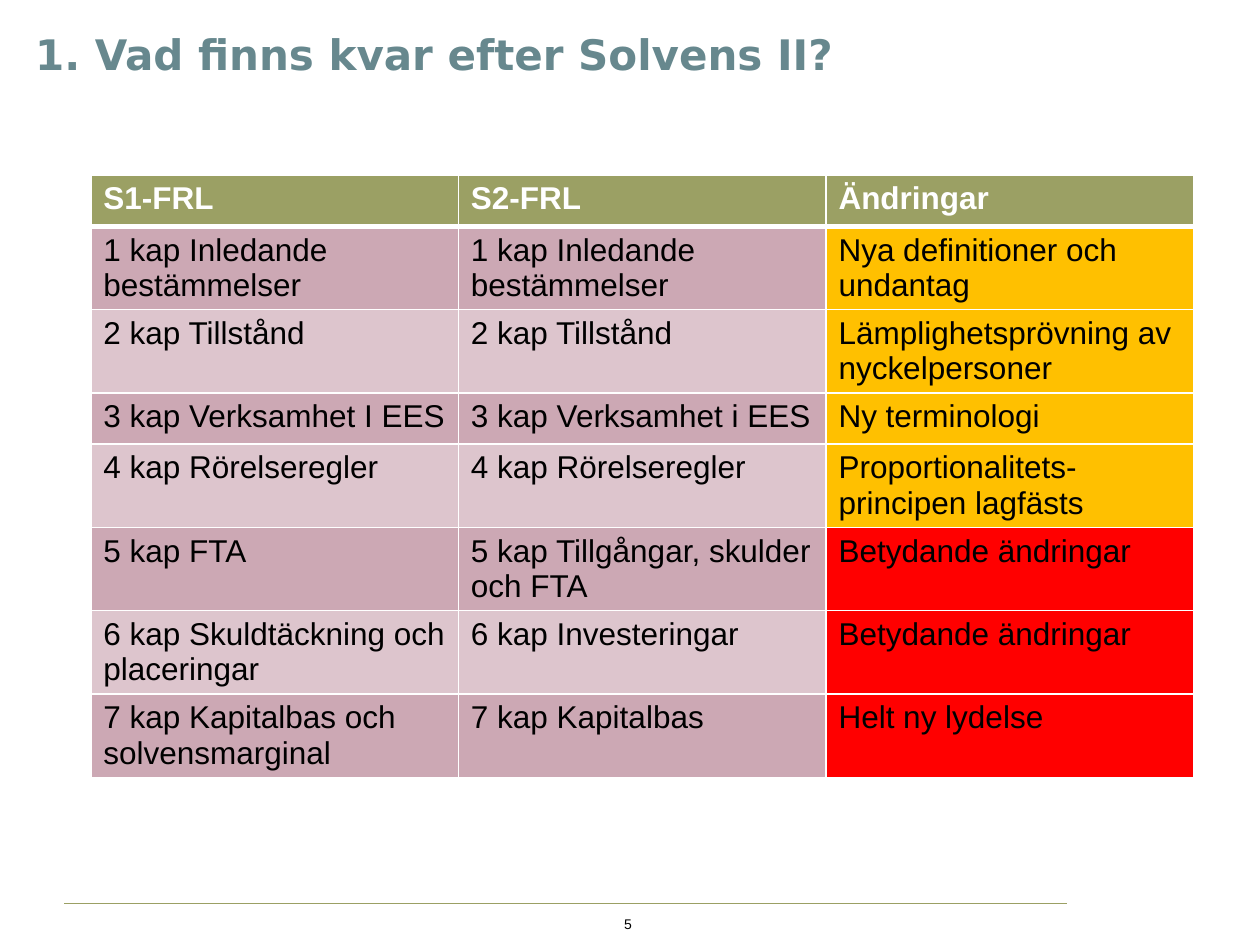
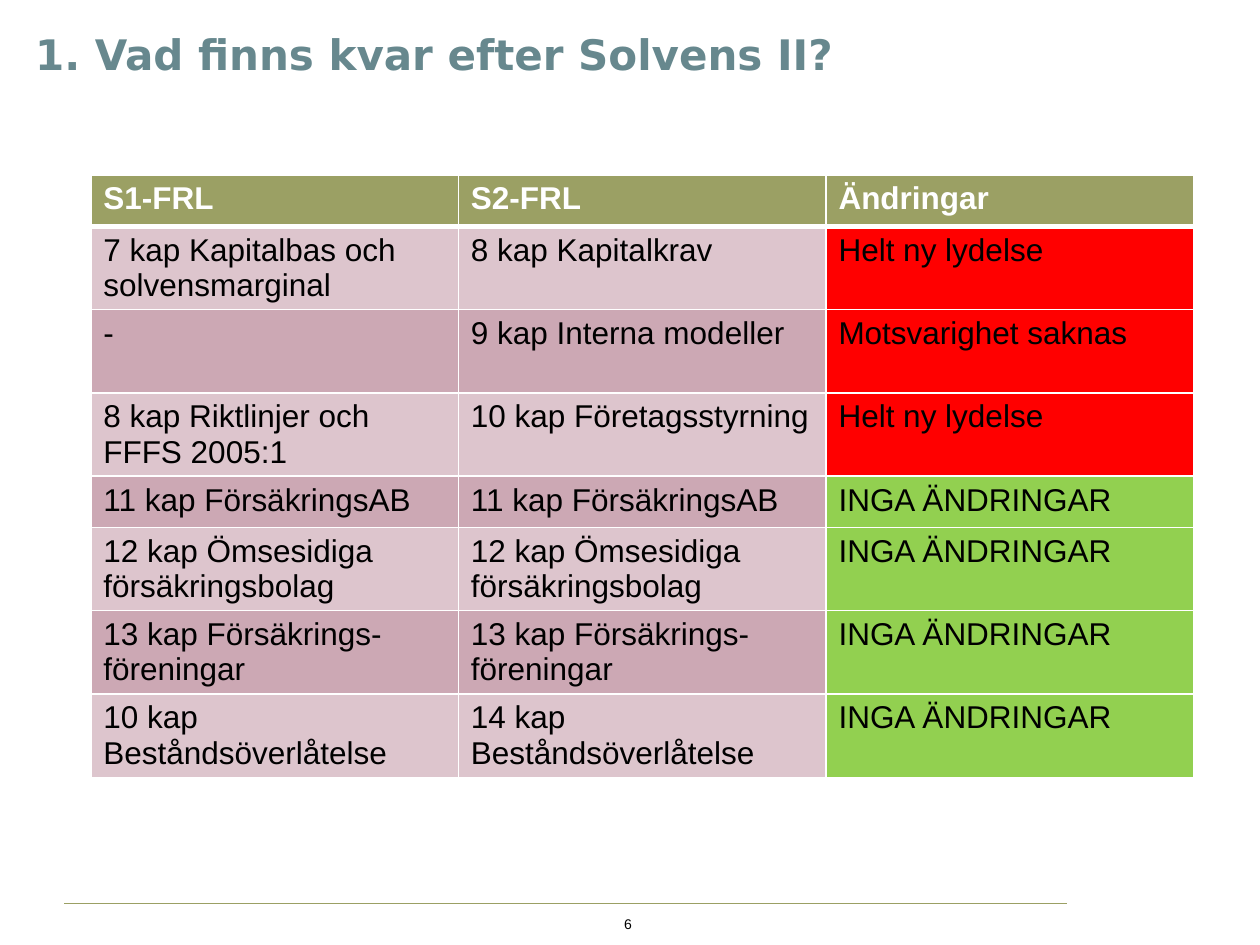
from lxml import etree
from pptx import Presentation
from pptx.dml.color import RGBColor
from pptx.enum import shapes, text
from pptx.oxml import ns
from pptx.util import Cm, Pt

OLIVE = RGBColor(0x9B, 0xA0, 0x64)
TEAL = RGBColor(0x67, 0x88, 0x8E)
DARK_ROSE = RGBColor(0xCC, 0xA8, 0xB4)
LIGHT_ROSE = RGBColor(0xDD, 0xC5, 0xCD)
AMBER = RGBColor(0xFF, 0xC0, 0x00)
RED = RGBColor(0xFF, 0x00, 0x00)
GREEN = RGBColor(0x92, 0xD0, 0x50)
WHITE = RGBColor(0xFF, 0xFF, 0xFF)
BLACK = RGBColor(0x00, 0x00, 0x00)

TITLE = "1. Vad finns kvar efter Solvens II?"
TITLE_BOX = (Cm(0.71), Cm(0.3), Cm(22.81), Cm(1.42))
TABLE_BOX = (Cm(1.83), Cm(3.53), Cm(22.23))
FOOTER_BOX = (Cm(1.3), Cm(18.21), Cm(20.21))
SHORT_ROW, TALL_ROW = Cm(1.03), Cm(1.68)
HEADINGS = ("S1-FRL", "S2-FRL", "Ändringar")

CHAPTERS_1_TO_7 = [
    ("1 kap Inledande bestämmelser", "1 kap Inledande bestämmelser",
     "Nya definitioner och undantag", AMBER),
    ("2 kap Tillstånd", "2 kap Tillstånd",
     "Lämplighetsprövning av nyckelpersoner", AMBER),
    ("3 kap Verksamhet I EES", "3 kap Verksamhet i EES",
     "Ny terminologi", AMBER),
    ("4 kap Rörelseregler", "4 kap Rörelseregler",
     "Proportionalitets-principen lagfästs", AMBER),
    ("5 kap FTA", "5 kap Tillgångar, skulder och FTA",
     "Betydande ändringar", RED),
    ("6 kap Skuldtäckning och placeringar", "6 kap Investeringar",
     "Betydande ändringar", RED),
    ("7 kap Kapitalbas och solvensmarginal", "7 kap Kapitalbas",
     "Helt ny lydelse", RED),
]
CHAPTERS_8_TO_14 = [
    ("7 kap Kapitalbas och solvensmarginal", "8 kap Kapitalkrav",
     "Helt ny lydelse", RED),
    ("-", "9 kap Interna modeller", "Motsvarighet saknas", RED),
    ("8 kap Riktlinjer och FFFS 2005:1", "10 kap Företagsstyrning",
     "Helt ny lydelse", RED),
    ("11 kap FörsäkringsAB", "11 kap FörsäkringsAB",
     "INGA ÄNDRINGAR", GREEN),
    ("12 kap Ömsesidiga försäkringsbolag", "12 kap Ömsesidiga försäkringsbolag",
     "INGA ÄNDRINGAR", GREEN),
    ("13 kap Försäkrings-föreningar", "13 kap Försäkrings-föreningar",
     "INGA ÄNDRINGAR", GREEN),
    ("10 kap Beståndsöverlåtelse", "14 kap Beståndsöverlåtelse",
     "INGA ÄNDRINGAR", GREEN),
]


def style_font(para, name, size, color, bold=False):
    """Set the font of a whole paragraph."""
    font = para.font
    font.name, font.size, font.bold = name, Pt(size), bold
    font.color.rgb = color


def add_text(page, box, words, anchor, inset=0):
    """Add a one-paragraph text box and return its paragraph."""
    frame = page.shapes.add_textbox(*box).text_frame
    frame.word_wrap = True
    frame.vertical_anchor = anchor
    frame.margin_left = frame.margin_right = 0
    frame.margin_top = frame.margin_bottom = inset
    para = frame.paragraphs[0]
    para.text = words
    return para


def add_title(page, box):
    """Write the shared title into its box."""
    para = add_text(page, box, TITLE, text.MSO_ANCHOR.BOTTOM, Cm(0.13))
    style_font(para, "DejaVu Sans", 24, TEAL, bold=True)


def add_footer(page, box, number):
    """Draw the rule at the bottom with the page number below it."""
    left, top, width = box
    rule = page.shapes.add_connector(
        shapes.MSO_CONNECTOR.STRAIGHT, left, top, left + width, top)
    rule.line.color.rgb = OLIVE
    rule.line.width = Pt(0.75)
    etree.SubElement(rule._element.spPr, ns.qn("a:effectLst"))
    number_box = (left + Cm(10.51), top + Cm(0.18), Cm(1.7), Cm(0.46))
    para = add_text(page, number_box, str(number), text.MSO_ANCHOR.MIDDLE)
    para.alignment = text.PP_ALIGN.CENTER
    style_font(para, "Arial", 8, BLACK)


def add_borders(cell, top=1, bottom=1):
    """Give a cell white borders, with widths in points."""
    properties = cell._tc.get_or_add_tcPr()
    widths = {"lnL": 1, "lnR": 1, "lnT": top, "lnB": bottom}
    for place, (side, points) in enumerate(widths.items()):
        border = etree.Element(ns.qn(f"a:{side}"), w=str(Pt(points)))
        fill = etree.SubElement(border, ns.qn("a:solidFill"))
        etree.SubElement(fill, ns.qn("a:srgbClr"), val=str(WHITE))
        properties.insert(place, border)


def fill_cell(cell, words, fill, color=BLACK, bold=False):
    """Write a cell and colour it."""
    cell.text = words
    style_font(cell.text_frame.paragraphs[0], "Arial", 18, color, bold)
    cell.fill.solid()
    cell.fill.fore_color.rgb = fill


def add_comparison(page, box, chapters, bands, short_row):
    """Build the table of chapters, all rows tall but the header and one other."""
    left, top, width = box
    heights = [SHORT_ROW if row in (0, short_row) else TALL_ROW
               for row in range(len(chapters) + 1)]
    table = page.shapes.add_table(
        len(heights), len(HEADINGS), left, top, width, sum(heights)).table
    table.first_row = table.horz_banding = False
    for row, height in zip(table.rows, heights):
        row.height = height
    for column, heading in enumerate(HEADINGS):
        cell = table.cell(0, column)
        fill_cell(cell, heading, OLIVE, WHITE, bold=True)
        add_borders(cell, bottom=3)
    for row, (old, new, change, signal) in enumerate(chapters, 1):
        band = bands[(row - 1) % 2]
        fills = (band, band, signal)
        for column, words in enumerate((old, new, change)):
            cell = table.cell(row, column)
            fill_cell(cell, words, fills[column])
            add_borders(cell, top=3 if row == 1 else 1)


def add_page(deck, number, chapters, bands, short_row):
    """Add one comparison slide."""
    page = deck.slides.add_slide(deck.slide_layouts[6])
    add_comparison(page, TABLE_BOX, chapters, bands, short_row)
    add_footer(page, FOOTER_BOX, number)
    add_title(page, TITLE_BOX)


def main():
    """Build and save the deck."""
    deck = Presentation()
    deck.slide_width, deck.slide_height = Cm(25.4), Cm(19.05)
    add_page(deck, 5, CHAPTERS_1_TO_7, (DARK_ROSE, LIGHT_ROSE), short_row=3)
    add_page(deck, 6, CHAPTERS_8_TO_14, (LIGHT_ROSE, DARK_ROSE), short_row=4)
    deck.save("out.pptx")


if __name__ == "__main__":
    main()
